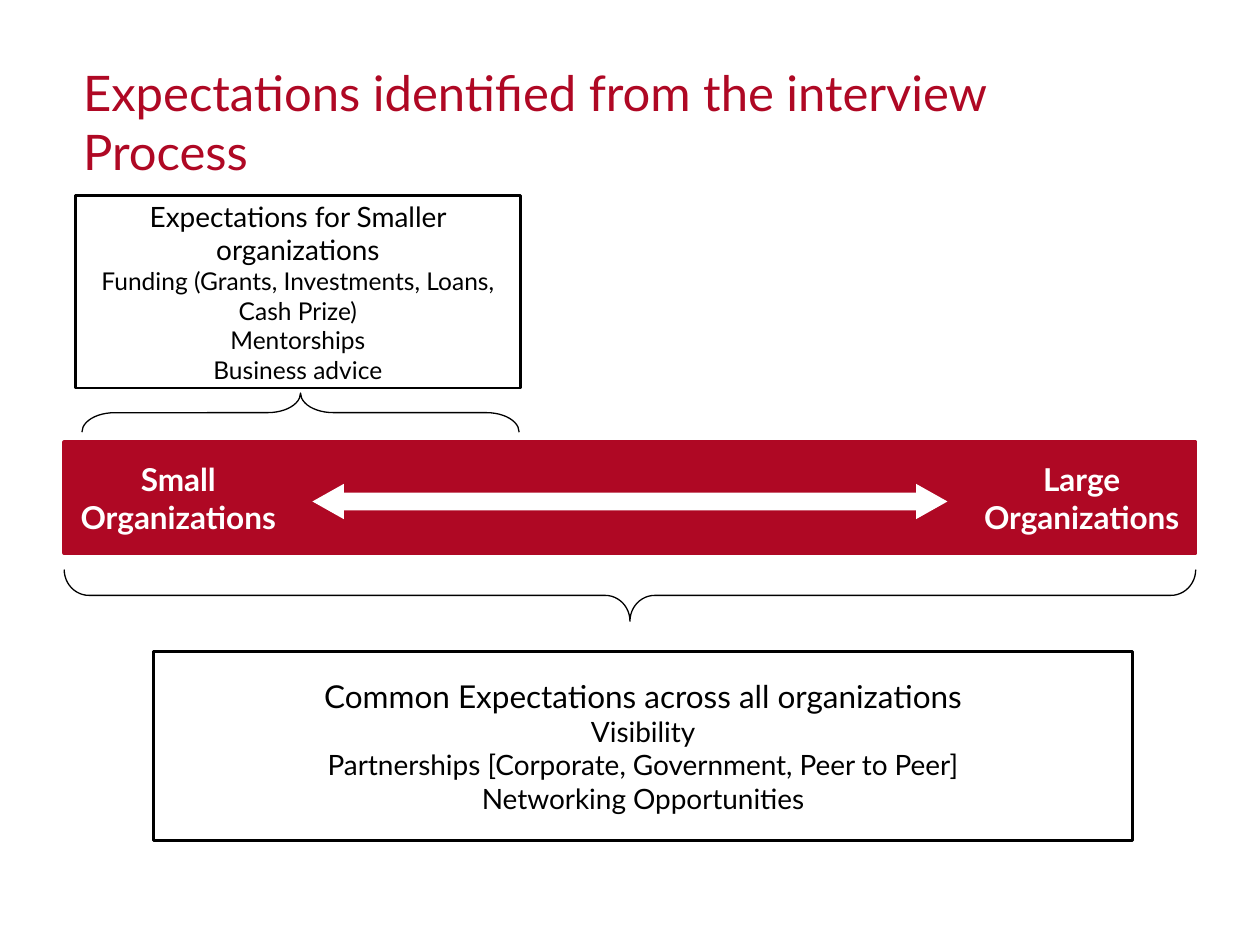
from dataclasses import dataclass

from pptx import Presentation
from pptx.dml.color import RGBColor
from pptx.enum.shapes import MSO_SHAPE
from pptx.enum.text import MSO_ANCHOR, MSO_AUTO_SIZE, PP_ALIGN
from pptx.util import Inches, Pt

COLUMNS, ROWS, CELL = 100, 75, Inches(0.1)


@dataclass(frozen=True)
class Theme:
    font: str = "Lato"
    red: RGBColor = RGBColor(0xAF, 0x08, 0x24)
    black: RGBColor = RGBColor(0, 0, 0)
    white: RGBColor = RGBColor(0xFF, 0xFF, 0xFF)
    title: int = 28
    large: int = 18
    medium: int = 16
    small: int = 14
    brace_line: float = 0.75
    box_line: float = 1.5
    band_line: float = 2


THEME = Theme()


@dataclass(frozen=True)
class Box:
    """A rectangle in columns and rows of the slide grid."""
    left: float
    top: float
    width: float
    height: float

    def emu(self):
        return [round(n * CELL) for n in (self.left, self.top, self.width, self.height)]

    def turned(self):
        """The frame that covers this box after a quarter turn."""
        shift = (self.width - self.height) / 2
        return Box(self.left + shift, self.top - shift, self.height, self.width)


def write(frame, text, size, color=THEME.black, bold=False,
          align=PP_ALIGN.CENTER, first=False):
    """Add one paragraph; first=True fills the paragraph already there."""
    frame.word_wrap = True
    frame.auto_size = MSO_AUTO_SIZE.NONE
    frame.vertical_anchor = MSO_ANCHOR.MIDDLE
    paragraph = frame.paragraphs[0] if first else frame.add_paragraph()
    paragraph.alignment = align
    run = paragraph.add_run()
    run.text = text
    run.font.name, run.font.size, run.font.bold = THEME.font, Pt(size), bold
    run.font.color.rgb = color


def draw(slide, preset, box, fill=None, line=None, line_width=1, adjustments=()):
    shape = slide.shapes.add_shape(preset, *box.emu())
    shape.shadow.inherit = False
    if fill is None:
        shape.fill.background()
    else:
        shape.fill.solid()
        shape.fill.fore_color.rgb = fill
    if line is None:
        shape.line.fill.background()
    else:
        shape.line.color.rgb = line
        shape.line.width = Pt(line_width)
    for index, value in enumerate(adjustments):
        shape.adjustments[index] = value
    return shape


def add_title(slide, box, text):
    title = slide.shapes.title
    title.left, title.top, title.width, title.height = box.emu()
    write(title.text_frame, text, THEME.title, THEME.red,
          align=PP_ALIGN.LEFT, first=True)


def add_size_band(slide, box, small_end, large_end):
    """Band with a label at each end and a double arrow between them."""
    draw(slide, MSO_SHAPE.RECTANGLE, box, THEME.red, THEME.red, THEME.band_line)
    arrow = Box(box.left + 19.7, box.top + 3.3, box.width - 39.4, 2.8)
    draw(slide, MSO_SHAPE.LEFT_RIGHT_ARROW, arrow, THEME.white, adjustments=(0.5, 0.89))
    label_width = 18.1
    for text, left in ((small_end, box.left),
                       (large_end, box.left + box.width - label_width)):
        label = slide.shapes.add_textbox(
            *Box(left, box.top, label_width, box.height).emu())
        write(label.text_frame, text, THEME.large, THEME.white, bold=True, first=True)


def add_expectations(slide, box, heading, items, heading_size, item_size):
    panel = draw(slide, MSO_SHAPE.RECTANGLE, box, THEME.white, THEME.black, THEME.box_line)
    write(panel.text_frame, heading, heading_size, first=True)
    for item in items:
        write(panel.text_frame, item, item_size)


def add_brace(slide, box, rotation, adjustments):
    brace = draw(slide, MSO_SHAPE.LEFT_BRACE, box.turned(), line=THEME.black,
                 line_width=THEME.brace_line, adjustments=adjustments)
    brace.rotation = rotation


def main():
    deck = Presentation()
    deck.slide_width, deck.slide_height = COLUMNS * CELL, ROWS * CELL
    slide = deck.slides.add_slide(deck.slide_layouts[5])

    add_title(slide, Box(5.6, 4.5, 84.3, 10.3),
              "Expectations identified from the interview Process")
    add_size_band(slide, Box(5.1, 35.1, 89.8, 8.8),
                  "Small Organizations", "Large Organizations")
    add_expectations(
        slide, Box(6, 15.5, 35.3, 15.3), "Expectations for Smaller organizations",
        ["Funding (Grants, Investments, Loans, Cash Prize)", "Mentorships",
         "Business advice"],
        THEME.medium, THEME.small)
    add_brace(slide, Box(6.5, 31.2, 34.7, 3.1), 90, (0.84, 0.5))
    add_brace(slide, Box(5.1, 45.2, 89.8, 4.1), 270, (0.48, 0.5))
    add_expectations(
        slide, Box(12.2, 51.7, 77.7, 15), "Common Expectations across all organizations",
        ["Visibility", "Partnerships [Corporate, Government, Peer to Peer]",
         "Networking Opportunities"],
        THEME.large, THEME.medium)

    deck.save("out.pptx")


if __name__ == "__main__":
    main()
